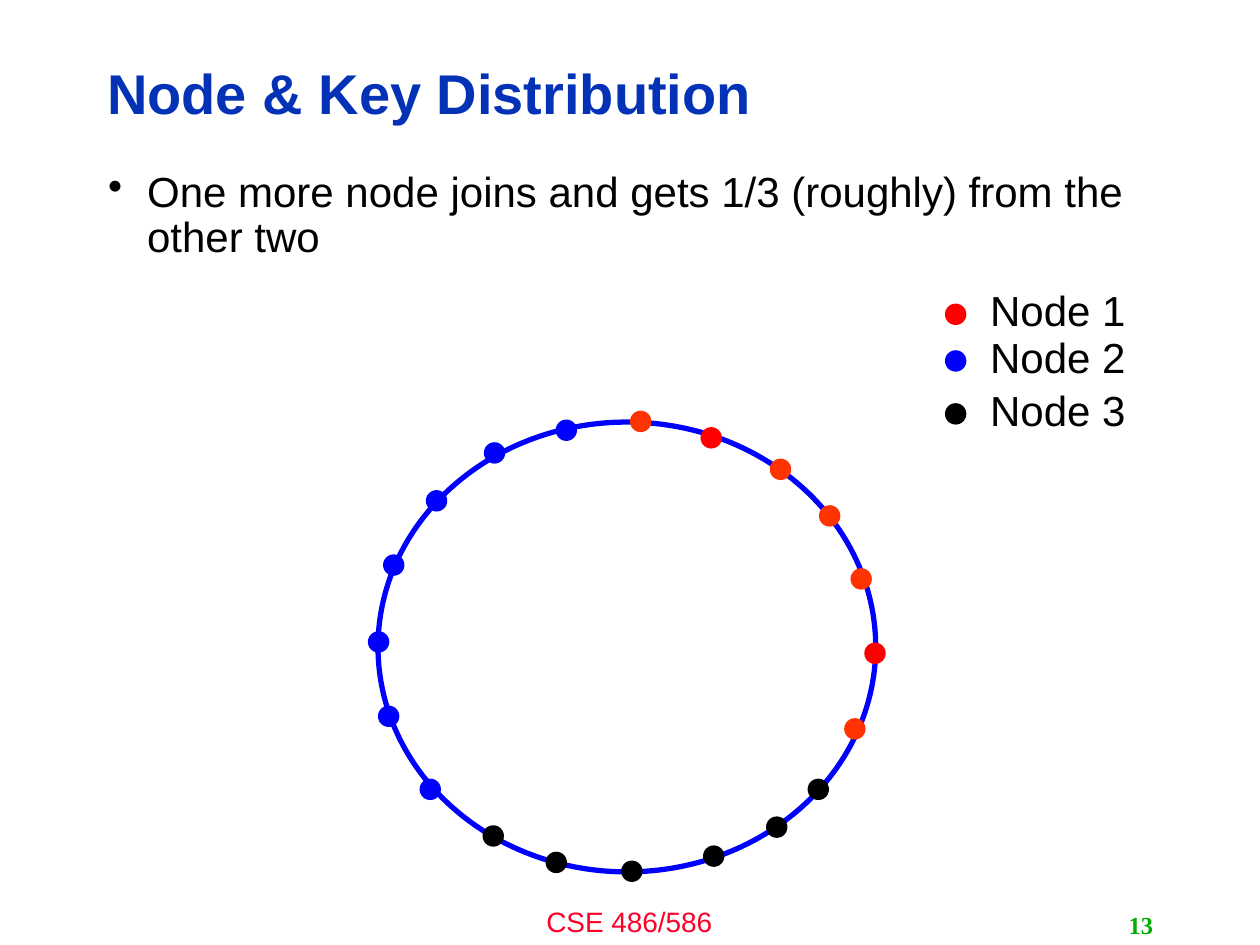
from lxml.etree import SubElement
from pptx import Presentation
from pptx.dml.color import RGBColor
from pptx.enum.shapes import MSO_SHAPE
from pptx.enum.text import MSO_ANCHOR, PP_ALIGN
from pptx.oxml.ns import qn
from pptx.util import Inches, Pt

NAVY = RGBColor(0x03, 0x32, 0xB7)
RED = RGBColor(0xFF, 0x00, 0x00)
ORANGE = RGBColor(0xFF, 0x33, 0x00)
BLUE = RGBColor(0x00, 0x00, 0xFF)
BLACK = RGBColor(0x00, 0x00, 0x00)
PINK = RGBColor(0xFC, 0x01, 0x28)
GREEN = RGBColor(0x00, 0xAE, 0x00)

deck = Presentation()
deck.slide_width = Inches(10)
deck.slide_height = Inches(7.5)
cell = deck.slide_width // 100
slide = deck.slides.add_slide(deck.slide_layouts[5])


def place(*cells):
    return [round(n * cell) for n in cells]


def write(box, text, size, color, align=PP_ALIGN.LEFT, face="Arial", bold=False):
    frame = box.text_frame
    frame.text = text
    para = frame.paragraphs[0]
    para.alignment = align
    para.font.name = face
    para.font.size = Pt(size)
    para.font.bold = bold
    para.font.color.rgb = color
    return para


title = slide.shapes.title
title.left, title.top, title.width, title.height = place(7.5, 3.6, 79.8, 8.1)
title.text_frame.vertical_anchor = MSO_ANCHOR.MIDDLE
head = write(title, "Node & Key Distribution", 32, NAVY, bold=True)
head.line_spacing = 0.9

body = slide.shapes.add_textbox(*place(7.6, 13.1, 84, 53.9))
body.text_frame.word_wrap = True
point = write(body, "One more node joins and gets 1/3 (roughly) from the other two", 24, BLACK)
point.line_spacing = 0.9
point.space_before = Pt(7.2)
props = point._p.get_or_add_pPr()
props.set("marL", str(Inches(0.31)))
props.set("indent", str(-Inches(0.31)))
SubElement(props, qn("a:buChar")).set("char", "•")

foot = slide.shapes.add_textbox(*place(33.3, 71.3, 33.3, 3.7))
foot.text_frame.word_wrap = True
write(foot, "CSE 486/586", 16, PINK, PP_ALIGN.CENTER)

page = slide.shapes.add_textbox(*place(71.7, 71.8, 20.8, 3.2))
page.text_frame.word_wrap = True
page.text_frame.vertical_anchor = MSO_ANCHOR.MIDDLE
write(page, "13", 14, GREEN, PP_ALIGN.RIGHT, "Times New Roman", True)

ring = slide.shapes.add_shape(MSO_SHAPE.OVAL, *place(30, 33.5, 39.5, 35.7))
ring.shadow.inherit = False
ring.fill.background()
ring.line.color.rgb = BLUE
ring.line.width = Pt(3)

keys = [
    (50, 32.6, ORANGE), (55.6, 33.9, RED), (61.1, 36.4, ORANGE),
    (65, 40.1, ORANGE), (67.5, 45.1, ORANGE), (68.6, 51, RED),
    (67, 57, ORANGE), (64.1, 61.8, BLACK), (60.8, 64.8, BLACK),
    (55.8, 67.1, BLACK), (49.3, 68.3, BLACK), (43.3, 67.6, BLACK),
    (38.3, 65.5, BLACK), (33.3, 61.8, BLUE), (30, 56, BLUE),
    (29.2, 50.1, BLUE), (30.4, 44, BLUE), (33.8, 38.9, BLUE),
    (38.4, 35.1, BLUE), (44.1, 33.3, BLUE),
]
legend = [
    ("Node 1", 24.1, RED),
    ("Node 2", 27.8, BLUE),
    ("Node 3", 32, BLACK),
]
for col, row, color in keys + [(75, row, color) for name, row, color in legend]:
    dot = slide.shapes.add_shape(MSO_SHAPE.OVAL, *place(col, row, 1.7, 1.7))
    dot.shadow.inherit = False
    dot.fill.solid()
    dot.fill.fore_color.rgb = color
    dot.line.fill.background()

for name, row, color in legend:
    label = slide.shapes.add_textbox(*place(77.5, row - 2, 12.9, 5))
    label.text_frame.word_wrap = False
    write(label, name, 24, BLACK, PP_ALIGN.CENTER)

deck.save("out.pptx")
